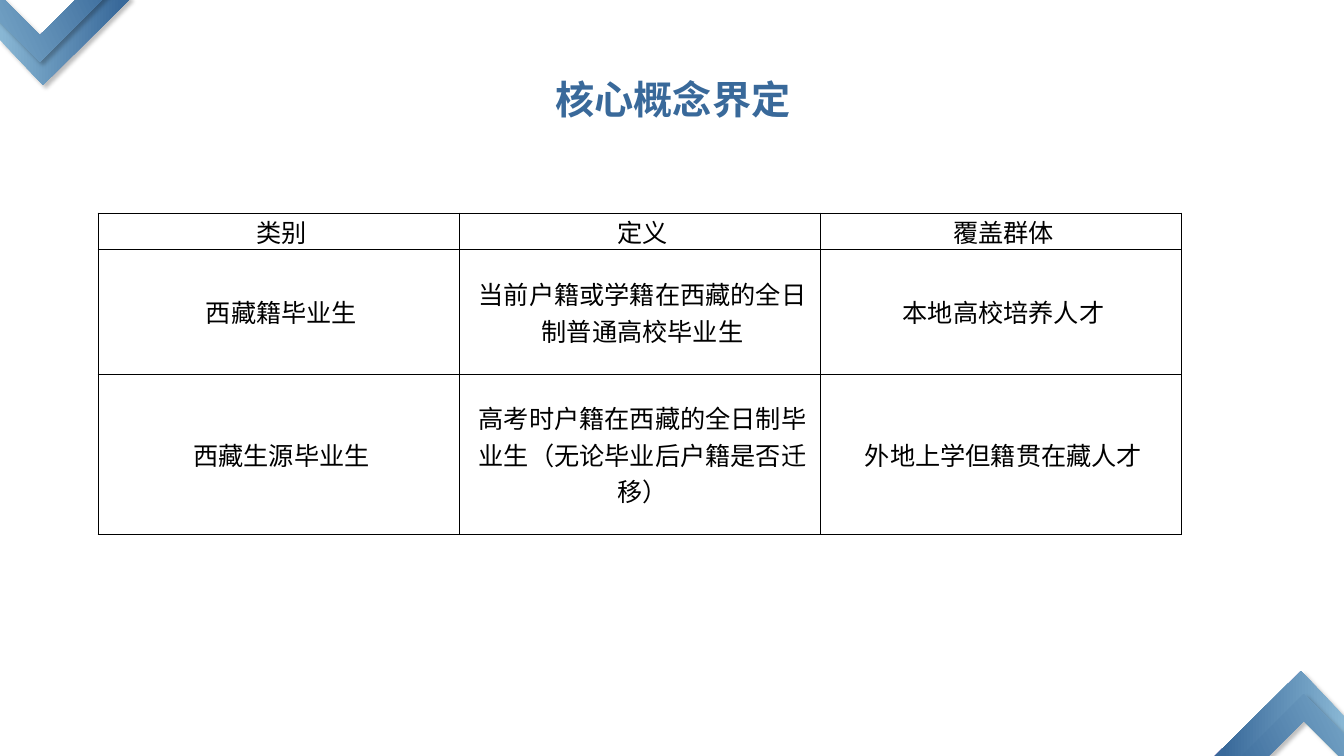
from dataclasses import dataclass

from lxml import etree
from pptx import Presentation, util as u
from pptx.dml.color import RGBColor
from pptx.enum import text
from pptx.oxml import ns

PX = 914400 / 100.8
SLIDE_WIDTH, SLIDE_HEIGHT = 1344, 756


@dataclass(frozen=True)
class Theme:
    font: str = "Noto Sans CJK SC"
    light_blue: str = "89B7D4"
    dark_blue: str = "39699A"
    ink: str = "000000"
    title_size: int = 28
    table_size: int = 18
    border: float = 0.5


THEME = Theme()

CHEVRONS = [
    (0, [(43, 85), (130, -1), (116, -15), (43, 57), (0, 14), (0, 40)]),
    (25, [(40, 62), (126, -24), (113, -37), (40, 35), (-32, -37), (-46, -24)]),
]

CONCEPTS = [
    ["类别", "定义", "覆盖群体"],
    ["西藏籍毕业生", "当前户籍或学籍在西藏的全日制普通高校毕业生", "本地高校培养人才"],
    ["西藏生源毕业生", "高考时户籍在西藏的全日制毕业生（无论毕业后户籍是否迁移）", "外地上学但籍贯在藏人才"],
]
COLUMN_WIDTH = 361
ROW_HEIGHTS = [36, 125, 160]


def px(length):
    return u.Emu(round(length * PX))


def add_child(parent, tag, **attributes):
    child = etree.SubElement(parent, ns.qn(tag))
    for name, value in attributes.items():
        child.set(name, str(value))
    return child


def format_paragraph(paragraph, size, color, bold=False):
    paragraph.alignment = text.PP_ALIGN.CENTER
    font = paragraph.font
    font.size = u.Pt(size)
    font.bold = bold
    font.color.rgb = RGBColor.from_string(color)
    font.name = THEME.font
    properties = paragraph._p.get_or_add_pPr()
    add_child(properties.find(ns.qn("a:defRPr")), "a:ea", typeface=THEME.font)


def add_shadow(shape):
    shape.shadow.inherit = False
    effects = shape._element.spPr.find(ns.qn("a:effectLst"))
    shadow = add_child(effects, "a:outerShdw", blurRad=u.Pt(3), dist=u.Pt(3),
                       dir=45 * 60000, algn="tl", rotWithShape=0)
    color = add_child(shadow, "a:srgbClr", val=THEME.ink)
    add_child(color, "a:alpha", val=25000)


def add_chevron(slide, points, angle):
    builder = slide.shapes.build_freeform(*points[0], scale=PX)
    builder.add_line_segments(points[1:], close=True)
    shape = builder.convert_to_shape()
    shape.line.fill.background()
    shape.fill.gradient()
    shape.fill.gradient_angle = angle
    stops = zip(shape.fill.gradient_stops, (THEME.light_blue, THEME.dark_blue), (0, 0.93))
    for stop, color, position in stops:
        stop.color.rgb = RGBColor.from_string(color)
        stop.position = position
    add_shadow(shape)


def add_corners(slide):
    for angle, points in CHEVRONS:
        add_chevron(slide, points, angle)
    for angle, points in CHEVRONS:
        turned = [(SLIDE_WIDTH - x, SLIDE_HEIGHT - y) for x, y in points]
        add_chevron(slide, turned, angle + 180)


def set_title(slide, wording):
    title = slide.shapes.title
    title.left, title.top, title.width, title.height = map(px, (72, 61, 1202, 76))
    frame = title.text_frame
    frame.text = wording
    frame.word_wrap = True
    frame.auto_size = text.MSO_AUTO_SIZE.NONE
    frame.vertical_anchor = text.MSO_ANCHOR.MIDDLE
    format_paragraph(frame.paragraphs[0], THEME.title_size, THEME.dark_blue, bold=True)


def add_borders(cell):
    properties = cell._tc.get_or_add_tcPr()
    for tag in ("a:lnL", "a:lnR", "a:lnT", "a:lnB"):
        line = add_child(properties, tag, w=u.Pt(THEME.border))
        add_child(add_child(line, "a:solidFill"), "a:srgbClr", val=THEME.ink)


def fill_cell(cell, wording):
    add_borders(cell)
    cell.fill.background()
    cell.vertical_anchor = text.MSO_ANCHOR.MIDDLE
    cell.margin_left = cell.margin_right = px(7)
    cell.margin_top = cell.margin_bottom = 0
    cell.text = wording
    paragraph = cell.text_frame.paragraphs[0]
    format_paragraph(paragraph, THEME.table_size, THEME.ink)
    properties = paragraph._p.get_or_add_pPr()
    properties.set("marL", str(px(6)))
    properties.set("indent", "0")


def add_concept_table(slide):
    column_count = len(CONCEPTS[0])
    frame = slide.shapes.add_table(
        len(CONCEPTS), column_count, px(98), px(213),
        px(COLUMN_WIDTH * column_count), px(sum(ROW_HEIGHTS)))
    table = frame.table
    table.first_row = table.horz_banding = False
    for column in table.columns:
        column.width = px(COLUMN_WIDTH)
    for row, height, wordings in zip(table.rows, ROW_HEIGHTS, CONCEPTS):
        row.height = px(height)
        for cell, wording in zip(row.cells, wordings):
            fill_cell(cell, wording)


def main():
    presentation = Presentation()
    presentation.slide_width = px(SLIDE_WIDTH)
    presentation.slide_height = px(SLIDE_HEIGHT)
    slide = presentation.slides.add_slide(presentation.slide_layouts[5])
    add_corners(slide)
    add_concept_table(slide)
    set_title(slide, "核心概念界定")
    presentation.save("out.pptx")


if __name__ == "__main__":
    main()
